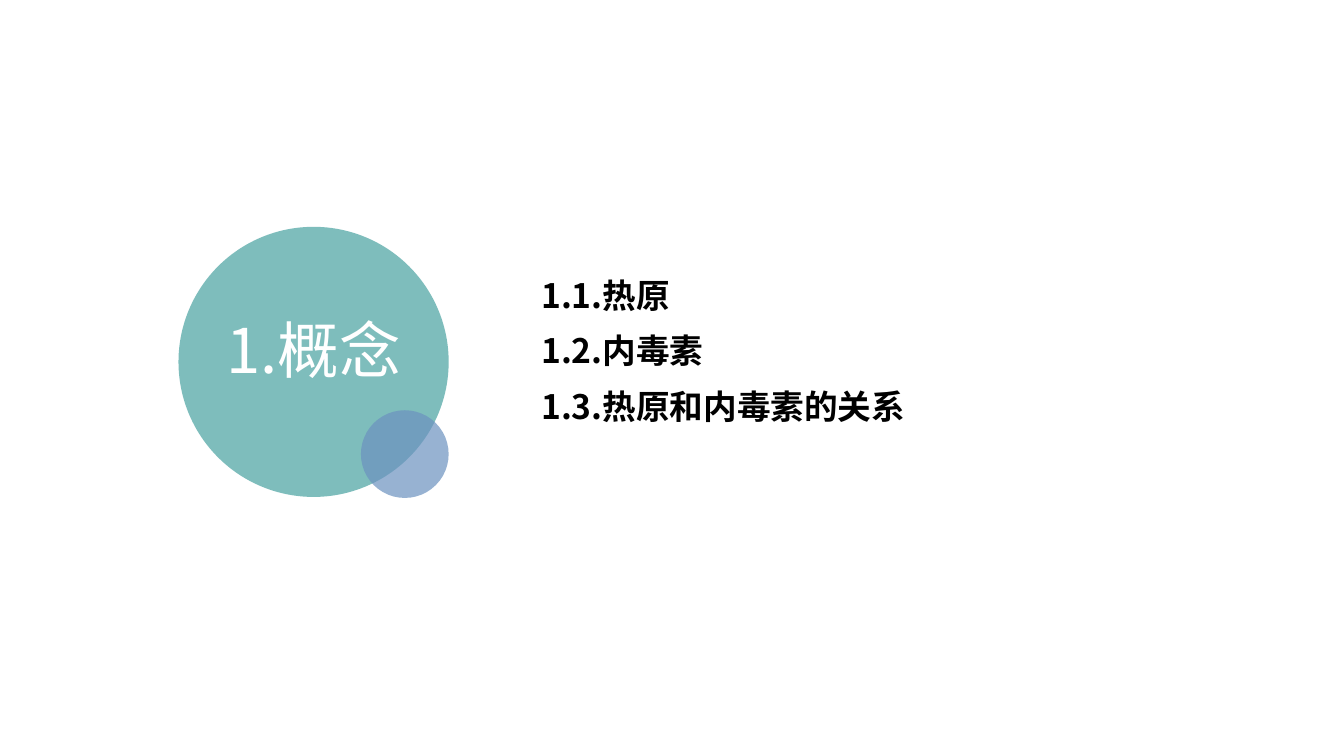
from dataclasses import dataclass

from lxml import etree
from pptx import Presentation
from pptx.dml.color import RGBColor
from pptx.enum import shapes, text
from pptx.oxml import ns
from pptx.util import Inches, Pt


@dataclass(frozen=True)
class Theme:
    font: str = "Noto Sans CJK SC"
    teal: str = "48A2A0"
    blue: str = "6C92C0"
    white: str = "FFFFFF"
    black: str = "000000"
    opacity: int = 70
    title_size: int = 44
    item_size: int = 24
    line_spacing: float = 0.9


THEME = Theme()


def add_circle(slide, left, top, diameter, color):
    circle = slide.shapes.add_shape(
        shapes.MSO_SHAPE.OVAL, *map(Inches, (left, top, diameter, diameter)))
    circle.shadow.inherit = False
    circle.line.fill.background()
    circle.fill.solid()
    circle.fill.fore_color.rgb = RGBColor.from_string(color)
    srgb = circle.element.spPr.find(".//" + ns.qn("a:srgbClr"))
    etree.SubElement(srgb, ns.qn("a:alpha"), val=str(THEME.opacity * 1000))


def write_text(shape, wording, size, color, bold, align, frame_format):
    frame = shape.text_frame
    frame_values = {"vertical_anchor": text.MSO_ANCHOR.TOP, **frame_format}
    for name, value in frame_values.items():
        setattr(frame, name, value)
    paragraph = frame.paragraphs[0]
    paragraph.alignment = align
    paragraph.line_spacing = THEME.line_spacing
    run = paragraph.add_run()
    run.text = wording
    for name, value in {"name": THEME.font, "size": Pt(size), "bold": bold}.items():
        setattr(run.font, name, value)
    run.font.color.rgb = RGBColor.from_string(color)
    # East Asian typeface
    latin = run.font._element.find(ns.qn("a:latin"))
    east_asian = etree.Element(ns.qn("a:ea"), typeface=THEME.font)
    latin.addnext(east_asian)


def add_chapter_badge(slide, left, top, diameter):
    """Large circle, small circle in its lower right corner, title on top."""
    small = 0.87
    add_circle(slide, left, top, diameter, THEME.teal)
    add_circle(slide, left + diameter - small, top + diameter - small + 0.01,
               small, THEME.blue)

    title = slide.shapes.title
    slide.shapes.element.append(title.element)  # bring in front of the circles
    box = {"left": left - 0.82, "top": top + 0.88, "width": 4.32, "height": 0.93}
    for name, value in box.items():
        setattr(title, name, Inches(value))
    write_text(title, "1.概念", THEME.title_size, THEME.white, False,
               text.PP_ALIGN.CENTER,
               {"word_wrap": True, "auto_size": text.MSO_AUTO_SIZE.NONE})


def add_section_list(slide, left, top, pitch):
    """Section headings at an equal pitch."""
    sections = (("1.1.热原", 1.56), ("1.2.内毒素", 1.9), ("1.3.热原和内毒素的关系", 3.93))
    for index, (wording, width) in enumerate(sections):
        heading = slide.shapes.add_textbox(
            *map(Inches, (left, top + index * pitch, width, 0.5)))
        write_text(heading, wording, THEME.item_size, THEME.black, True,
                   text.PP_ALIGN.LEFT,
                   {"word_wrap": False,
                    "auto_size": text.MSO_AUTO_SIZE.SHAPE_TO_FIT_TEXT})


def main():
    presentation = Presentation()
    presentation.slide_width = Inches(13.33)
    presentation.slide_height = Inches(7.5)
    slide = presentation.slides.add_slide(presentation.slide_layouts[5])
    add_chapter_badge(slide, 1.77, 2.25, 2.68)
    add_section_list(slide, 5.27, 2.72, 0.55)
    presentation.save("out.pptx")


if __name__ == "__main__":
    main()
